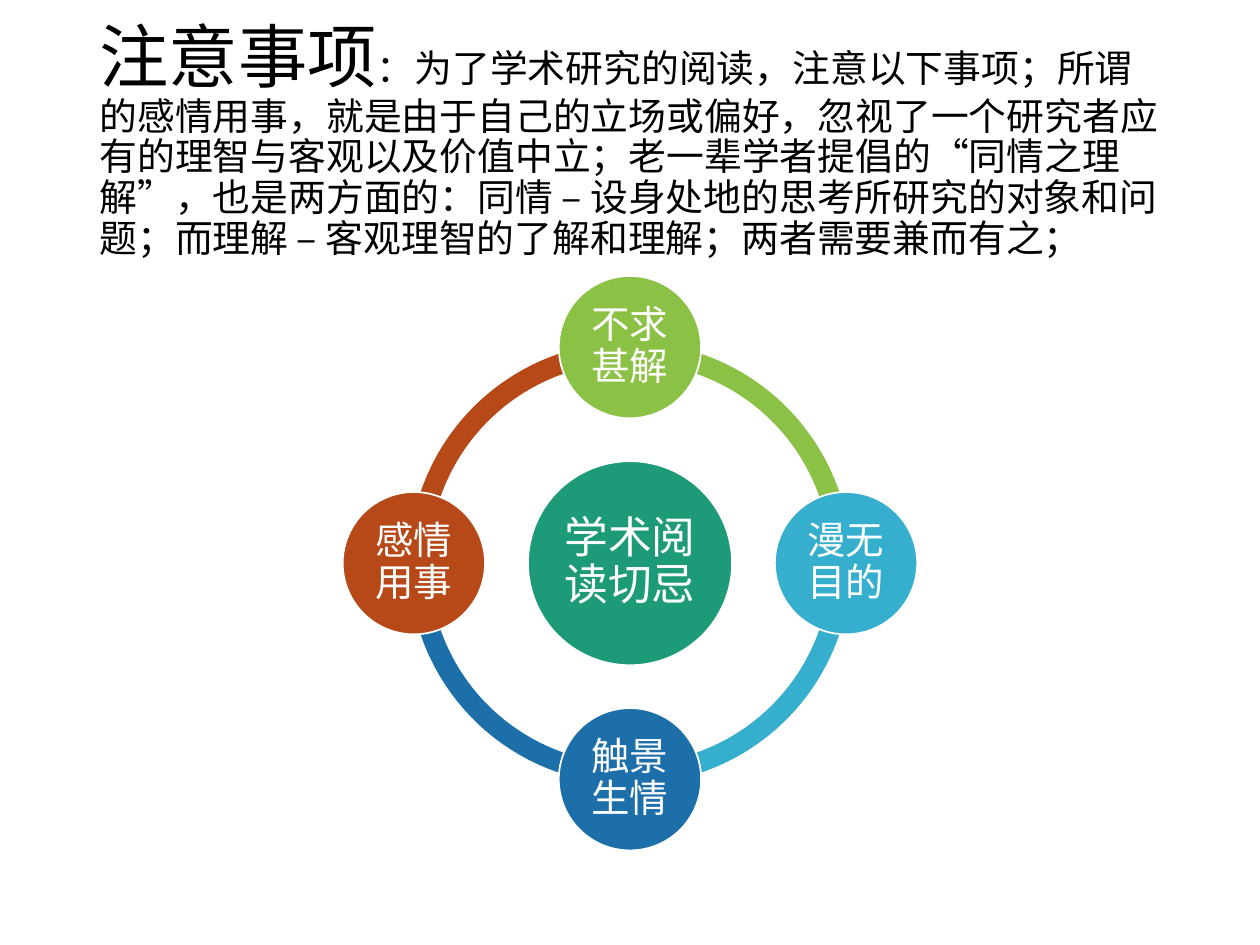
import math
from dataclasses import dataclass

from pptx import Presentation
from pptx import util as u
from pptx.dml.color import RGBColor
from pptx.enum import shapes, text


@dataclass(frozen=True)
class Theme:
    font: str = "Times New Roman"
    ink: str = "000000"
    white: str = "FFFFFF"
    hub: str = "1D9A78"
    green: str = "8BC145"
    cyan: str = "36AFCE"
    blue: str = "1D6FA9"
    rust: str = "B74919"
    heading_size: float = 39.6
    body_size: float = 21.6
    hub_size: float = 25
    node_size: float = 22
    line_spacing: float = 0.9


class SlideBuilder:
    def __init__(self, slide, theme):
        self.slide = slide
        self.theme = theme
        self.cycle = slide.shapes.add_group_shape()

    def format_paragraph(self, para, color, align):
        para.alignment = align
        para.line_spacing = self.theme.line_spacing
        para.font.name = self.theme.font
        para.font.color.rgb = RGBColor.from_string(color)

    def title(self, left, top, width, height, parts):
        box = self.slide.shapes.title
        box.left, box.top = u.Inches(left), u.Inches(top)
        box.width, box.height = u.Inches(width), u.Inches(height)
        frame = box.text_frame
        frame.word_wrap = True
        frame.auto_size = text.MSO_AUTO_SIZE.NONE
        frame.vertical_anchor = text.MSO_ANCHOR.MIDDLE
        para = frame.paragraphs[0]
        self.format_paragraph(para, self.theme.ink, text.PP_ALIGN.LEFT)
        for words, size in parts:
            span = para.add_run()
            span.text = words
            span.font.size = u.Pt(size)

    def centered_shape(self, kind, x, y, diameter, color):
        shape = self.cycle.shapes.add_shape(
            kind, u.Inches(x - diameter / 2), u.Inches(y - diameter / 2),
            u.Inches(diameter), u.Inches(diameter))
        shape.shadow.inherit = False
        shape.fill.solid()
        shape.fill.fore_color.rgb = RGBColor.from_string(color)
        return shape

    def arc(self, x, y, diameter, start, end, thickness, color):
        shape = self.centered_shape(
            shapes.MSO_SHAPE.BLOCK_ARC, x, y, diameter, color)
        shape.line.fill.background()
        # Block arc angles are stored as 0.6 units per degree
        shape.adjustments[0] = start % 360 * 0.6
        shape.adjustments[1] = end % 360 * 0.6
        shape.adjustments[2] = thickness

    def circle(self, x, y, diameter, color, label, size):
        shape = self.centered_shape(
            shapes.MSO_SHAPE.OVAL, x, y, diameter, color)
        shape.line.color.rgb = RGBColor.from_string(self.theme.white)
        shape.line.width = u.Pt(1)
        frame = shape.text_frame
        frame.word_wrap = True
        frame.vertical_anchor = text.MSO_ANCHOR.MIDDLE
        frame.margin_left = frame.margin_right = u.Inches(0.03)
        frame.margin_top = frame.margin_bottom = u.Inches(0.03)
        para = frame.paragraphs[0]
        para.text = label
        self.format_paragraph(para, self.theme.white, text.PP_ALIGN.CENTER)
        para.font.size = u.Pt(size)


def main():
    theme = Theme()
    deck = Presentation()
    deck.slide_width, deck.slide_height = u.Inches(10), u.Inches(7.5)
    page = SlideBuilder(deck.slides.add_slide(deck.slide_layouts[5]), theme)

    # Heading with its explanation
    page.title(0.69, 0.4, 8.62, 1.45, [
        ("注意事项", theme.heading_size),
        ("：为了学术研究的阅读，注意以下事项；所谓的感情用事，就是由于自己的立场或偏好，"
         "忽视了一个研究者应有的理智与客观以及价值中立；老一辈学者提倡的“同情之理解”，"
         "也是两方面的：同情 – 设身处地的思考所研究的对象和问题；"
         "而理解 – 客观理智的了解和理解；两者需要兼而有之；", theme.body_size),
    ])

    # Cycle: nodes run clockwise from the top, each arc leads to the next node
    center_x, center_y, orbit = 5, 4.47, 1.715
    nodes = [
        ("不求甚解", theme.green, 270),
        ("漫无目的", theme.cyan, 0),
        ("触景生情", theme.blue, 90),
        ("感情用事", theme.rust, 180),
    ]
    for label, color, angle in reversed(nodes):
        page.arc(center_x, center_y, 3.51, angle, angle + 90, 0.046, color)

    # Hub and nodes
    page.circle(center_x, center_y, 1.62, theme.hub, "学术阅读切忌", theme.hub_size)
    for label, color, angle in nodes:
        turn = math.radians(angle)
        page.circle(center_x + orbit * math.cos(turn),
                    center_y + orbit * math.sin(turn),
                    1.13, color, label, theme.node_size)

    deck.save("out.pptx")


if __name__ == "__main__":
    main()
